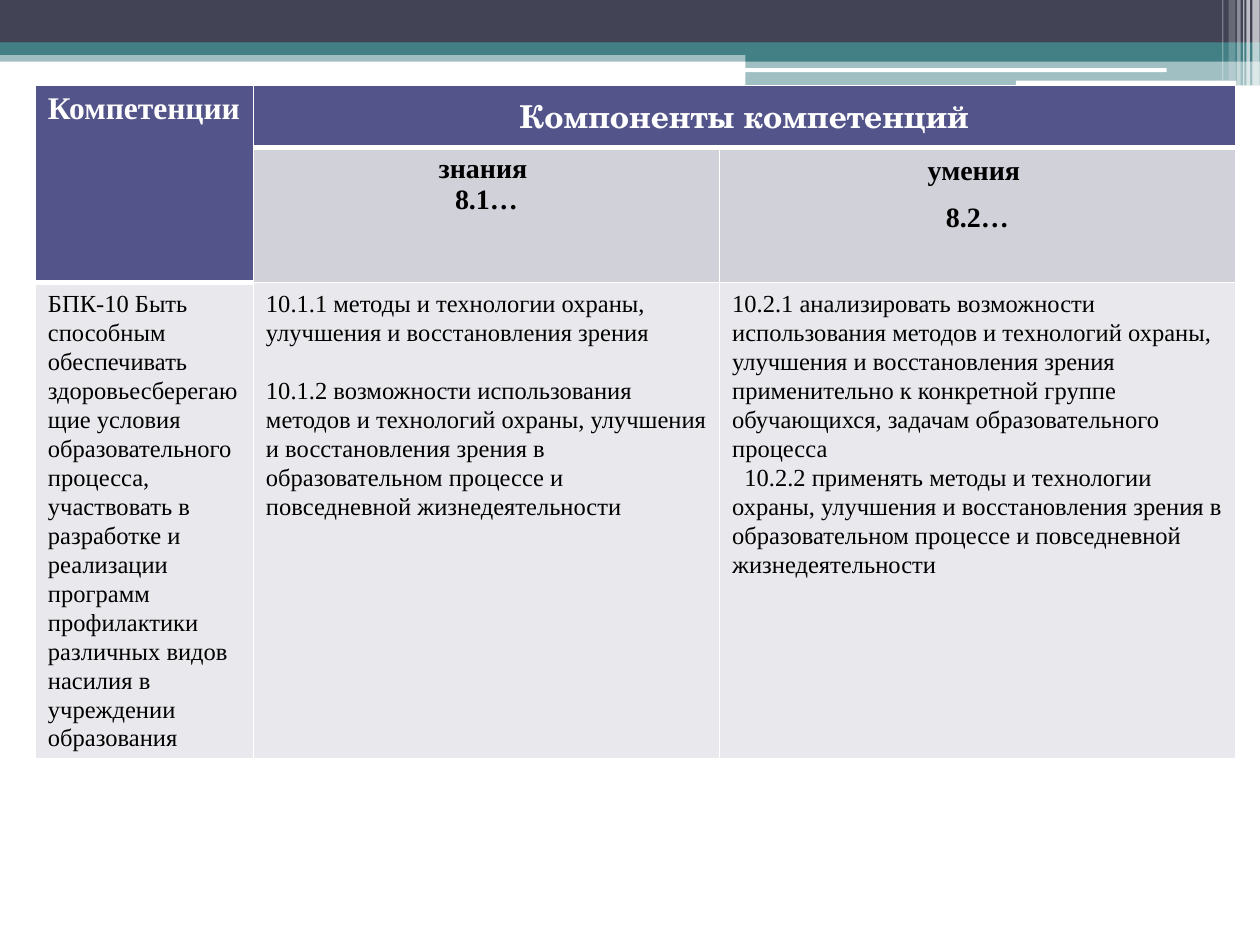
from lxml import etree
from pptx import Presentation
from pptx.dml.color import RGBColor
from pptx.enum.shapes import MSO_SHAPE
from pptx.enum.text import MSO_ANCHOR, PP_ALIGN
from pptx.oxml.ns import qn
from pptx.util import Pt

RECTANGLE = MSO_SHAPE.RECTANGLE
ROUNDED = MSO_SHAPE.ROUNDED_RECTANGLE
LEFT, CENTER = PP_ALIGN.LEFT, PP_ALIGN.CENTER
TOP, MIDDLE = MSO_ANCHOR.TOP, MSO_ANCHOR.MIDDLE

COLORS = {
    "white": "FFFFFF", "black": "000000", "navy": "424456", "teal": "438086",
    "header": "53548A", "subheader": "D1D1DA", "body": "E9E9ED",
}
SERIF, SCHOOL = "Times New Roman", "TeX Gyre Schola"
THIN, THICK = 1, 3

# left, top, width, height, colour, opacity in percent
BANDS = [
    (0, 28.8, 720, 6.5, "teal", 50),
    (0, 0, 720, 24.5, "navy", 100),
    (0, 24.2, 720, 7.2, "teal", 100),
    (426, 28, 294, 7.2, "teal", 100),
    (426, 35.2, 294, 13.6, "teal", 50),
]
# left, top, width, height
STRIPES = [(425.5, 39, 241.2, 2.2), (580.5, 46.1, 126, 2.6)]
# left, width, height, opacity in percent
EDGE_BARS = [
    (715.6, 4.2, 48.9, 65), (712.2, 2, 48.9, 65), (710.4, 0.7, 48.9, 60),
    (707, 2, 48.9, 40), (702, 4, 46, 20), (698.4, 0.7, 46, 30),
]

COLUMN_WIDTHS = [124.6, 266.4, 294.7]
ROW_HEIGHTS = [35.4, 77.2, 272]

COMPETENCE = ("БПК-10 Быть способным обеспечивать здоровьесберегающие условия "
              "образовательного процесса, участвовать в разработке и реализации программ "
              "профилактики различных видов насилия в учреждении образования")
KNOWLEDGE = [
    "10.1.1 методы и технологии охраны, улучшения и восстановления зрения",
    "10.1.2 возможности использования методов и технологий охраны, улучшения и "
    "восстановления зрения в образовательном процессе и повседневной жизнедеятельности",
]
SKILLS = [
    "10.2.1 анализировать возможности использования методов и технологий охраны, "
    "улучшения и восстановления зрения применительно к конкретной группе обучающихся, "
    "задачам образовательного процесса",
    "10.2.2 применять методы и технологии охраны, улучшения и восстановления зрения "
    "в образовательном процессе и повседневной жизнедеятельности",
]


def rgb(name):
    return RGBColor.from_string(COLORS[name])


def add_bar(slide, kind, left, top, width, height, color, opacity=100):
    shape = slide.shapes.add_shape(kind, Pt(left), Pt(top), Pt(width), Pt(height))
    shape.shadow.inherit = False
    shape.line.fill.background()
    shape.fill.solid()
    shape.fill.fore_color.rgb = rgb(color)
    if opacity < 100:
        color_element = shape.fill._xPr.find(qn("a:solidFill"))[0]
        etree.SubElement(color_element, qn("a:alpha"), val=str(opacity * 1000))


def add_top_decoration(slide, left, top):
    for x, y, width, height, color, opacity in BANDS:
        add_bar(slide, RECTANGLE, left + x, top + y, width, height, color, opacity)
    for x, y, width, height in STRIPES:
        add_bar(slide, ROUNDED, left + x, top + y, width, height, "white")
    for x, width, height, opacity in EDGE_BARS:
        add_bar(slide, RECTANGLE, left + x, top, width, height, "white", opacity)


def set_borders(cell, top, bottom):
    properties = cell._tc.get_or_add_tcPr()
    sides = [("L", THIN), ("R", THIN), ("T", top), ("B", bottom)]
    for index, (side, width) in enumerate(sides):
        line = etree.Element(qn(f"a:ln{side}"), w=str(Pt(width)))
        fill = etree.SubElement(line, qn("a:solidFill"))
        etree.SubElement(fill, qn("a:srgbClr"), val=COLORS["white"])
        properties.insert(index, line)


def fill_cell(cell, texts, size, color="black", font=SERIF, bold=False, align=LEFT,
              anchor=TOP, spacing=1.0, after=0, last_indent=0):
    cell.vertical_anchor = anchor
    frame = cell.text_frame
    for index, text in enumerate(texts):
        paragraph = frame.paragraphs[0] if index == 0 else frame.add_paragraph()
        paragraph.alignment = align
        paragraph.line_spacing = spacing
        paragraph.space_after = Pt(after)
        run = paragraph.add_run()
        run.text = text
        run.font.name = font
        run.font.size = Pt(size)
        run.font.bold = bold
        run.font.color.rgb = rgb(color)
    if last_indent:
        paragraph._p.get_or_add_pPr().set("indent", str(Pt(last_indent)))


def add_competence_table(slide, left, top):
    table = slide.shapes.add_table(
        len(ROW_HEIGHTS), len(COLUMN_WIDTHS), Pt(left), Pt(top),
        Pt(sum(COLUMN_WIDTHS)), Pt(sum(ROW_HEIGHTS))).table
    for column, width in zip(table.columns, COLUMN_WIDTHS):
        column.width = Pt(width)
    for row, height in zip(table.rows, ROW_HEIGHTS):
        row.height = Pt(height)

    for row_index, row_color in enumerate(["header", "subheader", "body"]):
        for column_index in range(len(COLUMN_WIDTHS)):
            header_end = 1 if column_index == 0 else 0
            cell = table.cell(row_index, column_index)
            cell.fill.solid()
            cell.fill.fore_color.rgb = rgb("header" if row_index <= header_end else row_color)
            set_borders(cell,
                        top=THICK if row_index == header_end + 1 else THIN,
                        bottom=THICK if row_index <= header_end else THIN)
    table.cell(0, 0).merge(table.cell(1, 0))
    table.cell(0, 1).merge(table.cell(0, 2))

    heading = {"size": 18, "color": "white", "bold": True}
    subheading = {"size": 16, "bold": True, "align": CENTER}
    body = {"size": 14, "spacing": 1.07}
    fill_cell(table.cell(0, 0), ["Компетенции"], **heading)
    fill_cell(table.cell(0, 1), ["Компоненты компетенций"], font=SCHOOL, align=CENTER,
              anchor=MIDDLE, **heading)
    fill_cell(table.cell(1, 1), ["знания ", "8.1…"], **subheading)
    fill_cell(table.cell(1, 2), ["умения ", "8.2…"], spacing=1.07, after=8, **subheading)
    fill_cell(table.cell(2, 0), [COMPETENCE], **body)
    fill_cell(table.cell(2, 1), KNOWLEDGE, after=16.5, **body)
    fill_cell(table.cell(2, 2), SKILLS, last_indent=7, **body)


def main():
    presentation = Presentation()
    presentation.slide_width, presentation.slide_height = Pt(720), Pt(540)
    slide = presentation.slides.add_slide(presentation.slide_layouts[6])
    add_top_decoration(slide, 0, 0)
    add_competence_table(slide, 20.2, 48.8)
    presentation.save("out.pptx")


if __name__ == "__main__":
    main()
